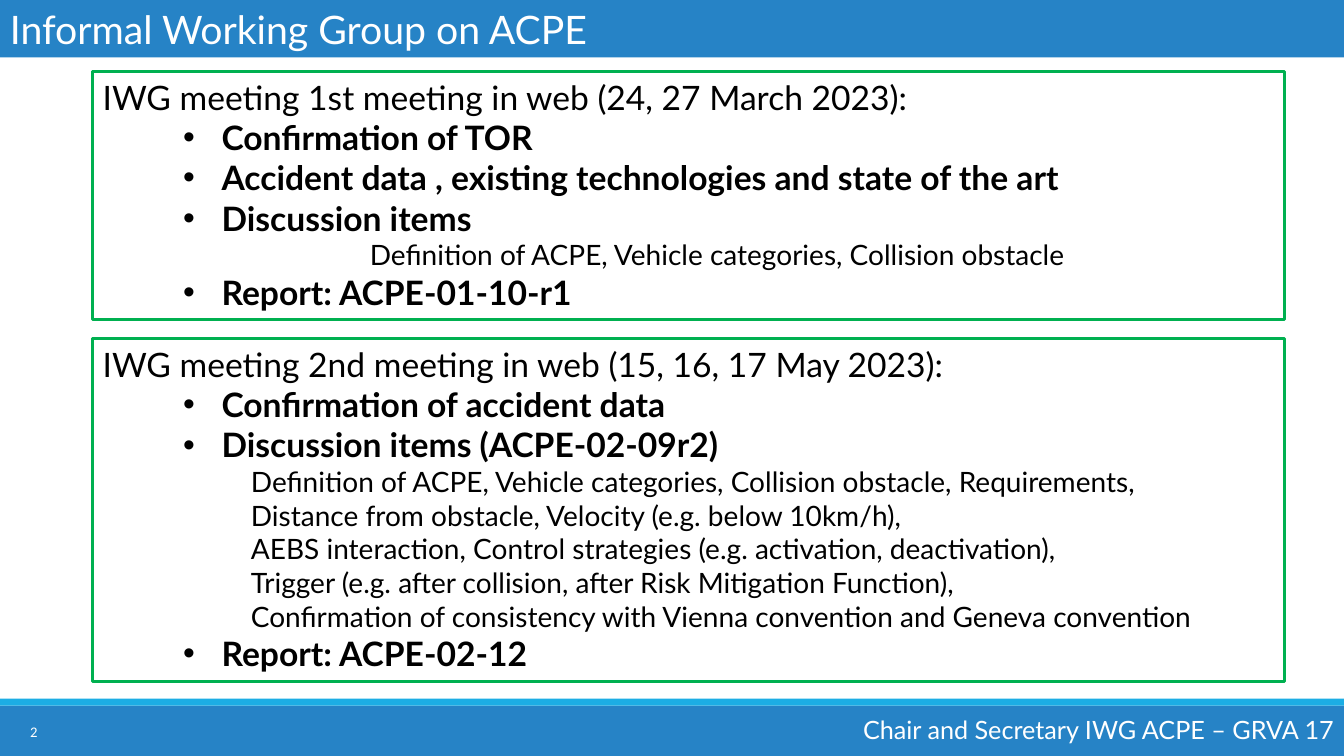
from lxml.etree import SubElement
from pptx import Presentation
from pptx.dml.color import RGBColor
from pptx.enum.shapes import MSO_SHAPE
from pptx.enum.text import MSO_ANCHOR, PP_ALIGN
from pptx.oxml.ns import qn
from pptx.util import Inches, Pt

WIDE, HIGH = Inches(13.33), Inches(7.5)
BLUE, SKY, GREEN, WHITE, BLACK = "2683C6", "1CADE4", "00B050", "FFFFFF", "000000"
LEFT, SPAN = 6.9, 88.67
HANG, POINT, DETAIL, DEEP = 2.85, 8.85, 11.03, 19.88

FIRST = [
    ("head", "IWG meeting 1st meeting in web (24, 27 March 2023):"),
    ("point", "Confirmation of TOR"),
    ("point", "Accident data , existing technologies and state of the art"),
    ("point", "Discussion items"),
    ("deep", "Definition of ACPE, Vehicle categories, Collision obstacle"),
    ("point", "Report: ACPE-01-10-r1"),
]
SECOND = [
    ("head", "IWG meeting 2nd meeting in web (15, 16, 17 May 2023):"),
    ("point", "Confirmation of accident data"),
    ("point", "Discussion items (ACPE-02-09r2)"),
    ("detail", "Definition of ACPE, Vehicle categories, Collision obstacle, Requirements,"),
    ("detail", "Distance from obstacle, Velocity (e.g. below 10km/h),"),
    ("detail", "AEBS interaction, Control strategies (e.g. activation, deactivation),"),
    ("detail", "Trigger (e.g. after collision, after Risk Mitigation Function),"),
    ("detail", "Confirmation of consistency with Vienna convention and Geneva convention"),
    ("point", "Report: ACPE-02-12"),
]
STYLES = {
    "head": (24, False, 0),
    "point": (24, True, POINT),
    "detail": (20, False, DETAIL),
    "deep": (20, False, DEEP),
}


def color(text):
    """Turn a hex string into a colour."""
    return RGBColor.from_string(text)


def across(share):
    """Turn a percentage of the slide width into a length."""
    return round(WIDE * share / 100)


def place(left, top, width, height):
    """Turn percentages of the slide into a position and a size."""
    return across(left), round(HIGH * top / 100), across(width), round(HIGH * height / 100)


def bar(slide, area, fill=None, line=None):
    """Add a rectangle with an optional fill and outline."""
    shape = slide.shapes.add_shape(MSO_SHAPE.RECTANGLE, *place(*area))
    shape.shadow.inherit = False
    if fill:
        shape.fill.solid()
        shape.fill.fore_color.rgb = color(fill)
    else:
        shape.fill.background()
    if line:
        shape.line.color.rgb = color(line)
        shape.line.width = Pt(2.5)
    else:
        shape.line.fill.background()
    return shape


def write(para, text, size, tint, bold=False, face="Lato", align=PP_ALIGN.LEFT):
    """Fill a paragraph and set its font."""
    para.text = text
    para.alignment = align
    font = para.font
    font.name, font.size, font.bold = face, Pt(size), bold
    font.color.rgb = color(tint)


def indent(para, left, dot):
    """Indent a paragraph and hang a bullet if it has one."""
    props = para._p.get_or_add_pPr()
    props.set("marL", str(across(left)))
    props.set("indent", str(-across(HANG) if dot else 0))
    if dot:
        mark = SubElement(props, qn("a:buChar"))
        mark.set("char", "•")
        props.insert(0, mark)
        face = SubElement(props, qn("a:buFont"))
        face.set("typeface", "Arial")
        props.insert(0, face)


def label(slide, area, text, size, face="Lato"):
    """Add a right-aligned white text box."""
    frame = slide.shapes.add_textbox(*place(*area)).text_frame
    frame.word_wrap = True
    frame.vertical_anchor = MSO_ANCHOR.MIDDLE
    write(frame.paragraphs[0], text, size, WHITE, face=face, align=PP_ALIGN.RIGHT)


def panel(slide, top, height, items):
    """Add a framed meeting summary."""
    frame = bar(slide, (LEFT, top, SPAN, height), line=GREEN).text_frame
    frame.word_wrap = True
    frame.vertical_anchor = MSO_ANCHOR.TOP
    for row, (kind, text) in enumerate(items):
        para = frame.add_paragraph() if row else frame.paragraphs[0]
        size, bold, left = STYLES[kind]
        write(para, text, size, BLACK, bold)
        indent(para, left, kind == "point")


def main():
    """Build the slide and save it."""
    deck = Presentation()
    deck.slide_width, deck.slide_height = WIDE, HIGH
    slide = deck.slides.add_slide(deck.slide_layouts[6])
    bar(slide, (0, 93.33, 100, 6.67), BLUE)
    bar(slide, (0, 92.4, 100, 0.93), SKY)
    label(slide, (0, 94.13, 3.53, 5.33), "2", 10.5, "Calibri")
    title = bar(slide, (0, 0, 100, 7.6), BLUE).text_frame
    title.vertical_anchor = MSO_ANCHOR.TOP
    write(title.paragraphs[0], "Informal Working Group on ACPE", 28, WHITE)
    label(slide, (63.17, 93.87, 36.83, 5.33), "Chair and Secretary IWG ACPE – GRVA 17", 18)
    panel(slide, 9.47, 32.8, FIRST)
    panel(slide, 44.8, 45.33, SECOND)
    deck.save("out.pptx")


if __name__ == "__main__":
    main()
